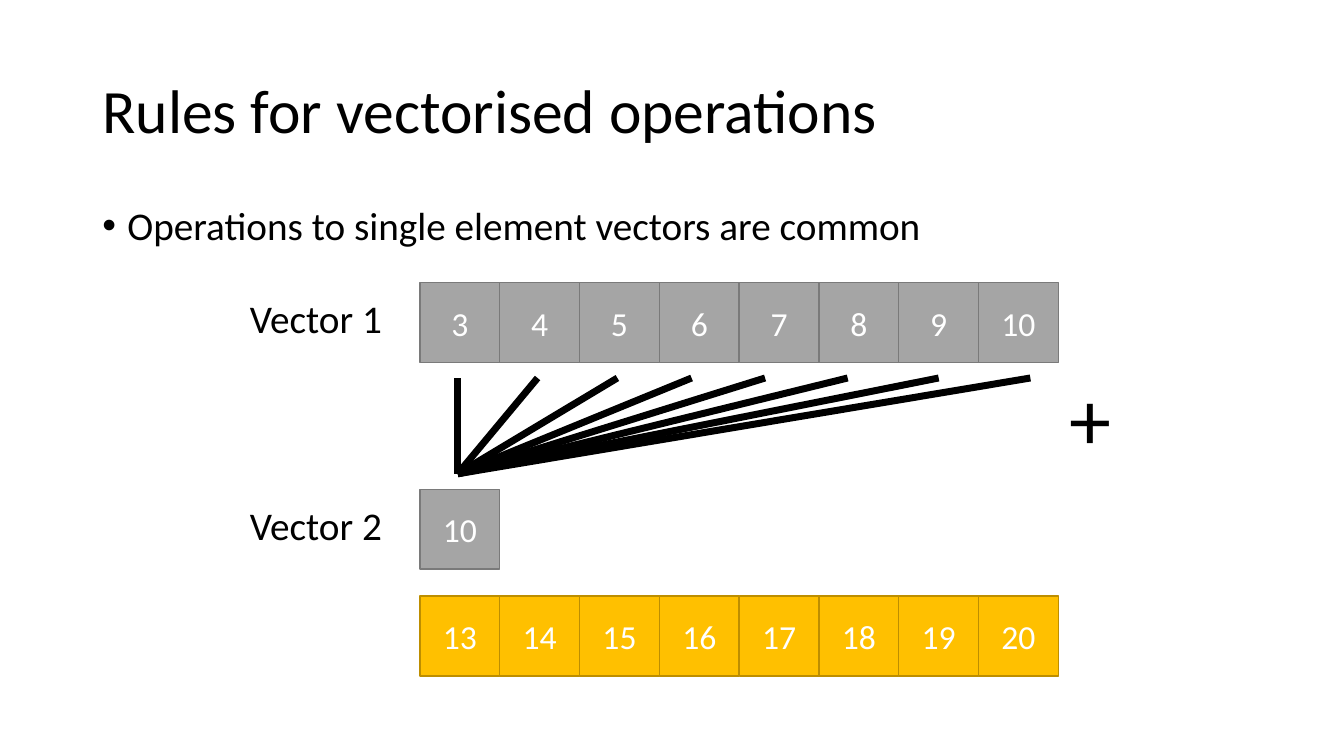
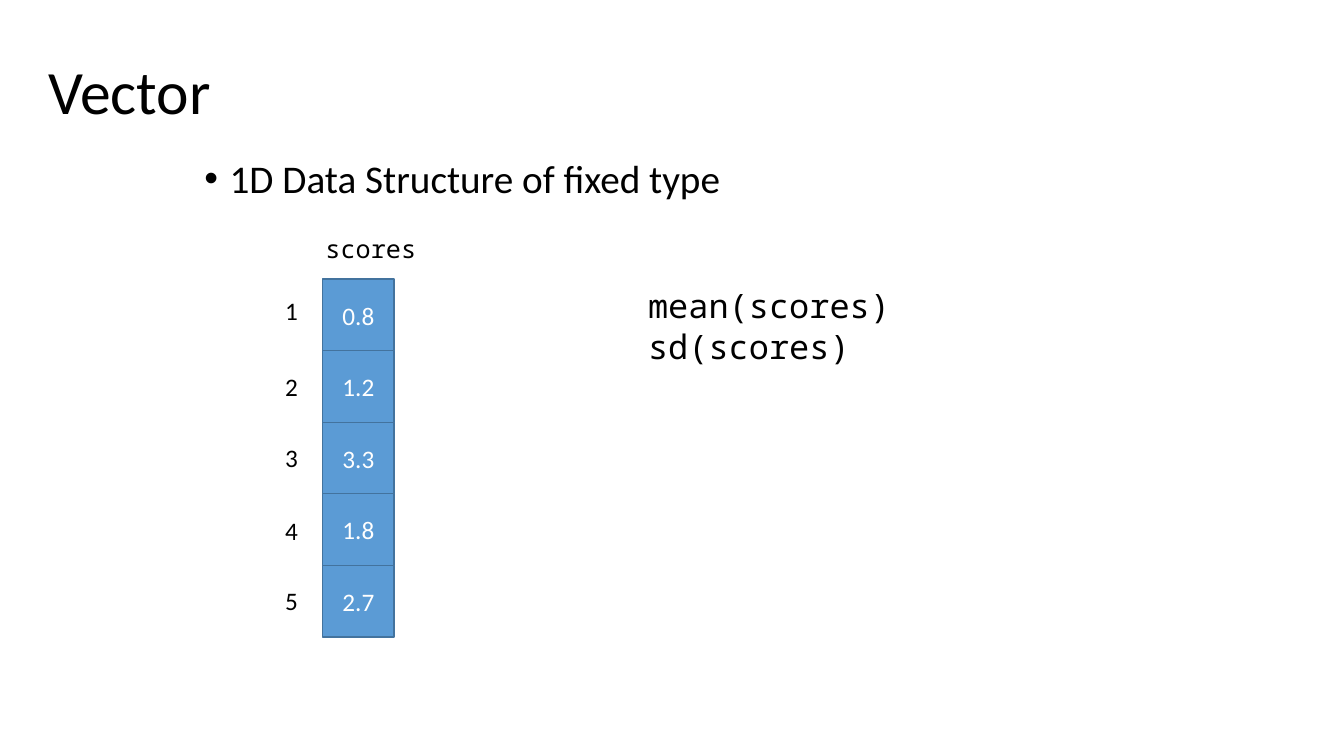
"""Builds two slides that explain vectors and vectorised operations."""
from dataclasses import dataclass

from lxml import etree
from pptx import Presentation
from pptx.dml.color import RGBColor
from pptx.enum.shapes import MSO_CONNECTOR, MSO_SHAPE
from pptx.enum.text import MSO_ANCHOR, MSO_AUTO_SIZE, PP_ALIGN
from pptx.oxml.ns import qn
from pptx.util import Pt

RECTANGLE = MSO_SHAPE.RECTANGLE
STRAIGHT = MSO_CONNECTOR.STRAIGHT
MIDDLE = MSO_ANCHOR.MIDDLE
TOP = MSO_ANCHOR.TOP
NO_FIT = MSO_AUTO_SIZE.NONE
LEFT = PP_ALIGN.LEFT
CENTER = PP_ALIGN.CENTER
TITLE_ONLY = 5


@dataclass(frozen=True)
class Theme:
    """Colours, fonts and type sizes of the deck."""
    ink: str = "000000"
    cell_ink: str = "FFFFFF"
    grey: tuple = ("A5A5A5", "7A7A7A")
    gold: tuple = ("FFC000", "BD8E00")
    blue: tuple = ("5B9BD5", "43739E")
    font: str = "Calibri"
    code_font: str = "Noto Sans Mono"
    title: int = 44
    body: int = 28
    code: int = 24
    cell: int = 24
    small: int = 18
    operator: int = 60
    line_spacing: float = 0.9
    bullet_indent: int = 18


THEME = Theme()


def write(paragraph, text, size, color=THEME.ink, font=THEME.font):
    """Add one formatted run to a paragraph."""
    run = paragraph.add_run()
    run.text = text
    run.font.size = Pt(size)
    run.font.name = font
    run.font.color.rgb = RGBColor.from_string(color)


def add_title_slide(deck, title, box):
    """Add a slide and place its title in the given box."""
    slide = deck.slides.add_slide(deck.slide_layouts[TITLE_ONLY])
    heading = slide.shapes.title
    heading.left, heading.top, heading.width, heading.height = map(Pt, box)
    frame = heading.text_frame
    frame.auto_size = NO_FIT
    frame.vertical_anchor = MIDDLE
    paragraph = frame.paragraphs[0]
    paragraph.alignment = LEFT
    paragraph.line_spacing = THEME.line_spacing
    write(paragraph, title, THEME.title)
    return slide


def add_bullet(shapes, text, box):
    """Add a text box with one bulleted paragraph."""
    frame = shapes.add_textbox(*map(Pt, box)).text_frame
    frame.word_wrap = True
    paragraph = frame.paragraphs[0]
    paragraph.line_spacing = THEME.line_spacing
    paragraph.space_before = Pt(10)
    properties = paragraph._p.get_or_add_pPr()
    properties.set("marL", str(Pt(THEME.bullet_indent)))
    properties.set("indent", str(-Pt(THEME.bullet_indent)))
    etree.SubElement(properties, qn("a:buFont")).set("typeface", "Arial")
    etree.SubElement(properties, qn("a:buChar")).set("char", "•")
    write(paragraph, text, THEME.body)


def add_label(shapes, lines, box, size, font=THEME.font):
    """Add unwrapped text, one paragraph for each line."""
    frame = shapes.add_textbox(*map(Pt, box)).text_frame
    frame.word_wrap = False
    frame.vertical_anchor = TOP
    for index, line in enumerate(lines):
        paragraph = frame.add_paragraph() if index else frame.paragraphs[0]
        write(paragraph, line, size, font=font)


def add_vector(shapes, values, left, top, side, colors, size, vertical=False):
    """Add a group of adjoining square cells, across or down."""
    fill, outline = colors
    cells = shapes.add_group_shape().shapes
    for index, value in enumerate(values):
        offset = index * side
        x, y = (left, top + offset) if vertical else (left + offset, top)
        cell = cells.add_shape(RECTANGLE, Pt(x), Pt(y), Pt(side), Pt(side))
        cell.shadow.inherit = False
        cell.fill.solid()
        cell.fill.fore_color.rgb = RGBColor.from_string(fill)
        cell.line.color.rgb = RGBColor.from_string(outline)
        cell.line.width = Pt(1)
        cell.text_frame.vertical_anchor = MIDDLE
        paragraph = cell.text_frame.paragraphs[0]
        paragraph.alignment = CENTER
        write(paragraph, str(value), size, THEME.cell_ink)


def add_fan(shapes, starts, top, end, bottom):
    """Add a group of thick lines that meet in one point."""
    rays = shapes.add_group_shape().shapes
    for start in starts:
        ray = rays.add_connector(STRAIGHT, Pt(start), Pt(top), Pt(end), Pt(bottom))
        ray.line.color.rgb = RGBColor.from_string(THEME.ink)
        ray.line.width = Pt(5)
        etree.SubElement(ray._element.spPr, qn("a:effectLst"))


def build_operations(deck):
    """Show a single element added to each element of a vector."""
    slide = add_title_slide(deck, "Rules for vectorised operations", (66, 28.8, 828, 104.4))
    shapes = slide.shapes
    add_bullet(shapes, "Operations to single element vectors are common", (66, 144, 828, 342.7))

    left, side, addend = 300, 57, 10
    numbers = range(3, 11)
    sums = [number + addend for number in numbers]
    rows = ((numbers, 202, THEME.grey), ([addend], 349.5, THEME.grey), (sums, 425.8, THEME.gold))
    for values, top, colors in rows:
        add_vector(shapes, values, left, top, side, colors, THEME.cell)

    for name, top in (("Vector 1", 206.6), ("Vector 2", 354.6)):
        add_label(shapes, [name], (171.4, top, 110, 41), THEME.body)
    add_label(shapes, ["+"], (756.7, 258.5, 44.6, 80), THEME.operator)

    ray_starts = (327, 384, 441, 494, 546.5, 605.5, 670.5, 736)
    add_fan(shapes, ray_starts, 270, ray_starts[0], 338.4)


def build_vector(deck):
    """Show a vector of scores with its indices and two function calls."""
    slide = add_title_slide(deck, "Vector", (27.4, 22.3, 648, 90))
    shapes = slide.shapes
    add_bullet(shapes, "1D Data Structure of fixed type", (139, 110.2, 648, 53.3))

    scores = (0.8, 1.2, 3.3, 1.8, 2.7)
    add_vector(shapes, scores, 230.4, 199.4, 51.1, THEME.blue, THEME.small, vertical=True)
    index_tops = (207.4, 261.4, 312.5, 364.3, 414.7)
    for index, top in enumerate(index_tops, start=1):
        add_label(shapes, [str(index)], (196.6, top, 23.8, 29), THEME.small)

    add_label(shapes, ["scores"], (225.4, 163.4, 80, 29), THEME.small, THEME.code_font)
    add_label(shapes, ["mean(scores)", "sd(scores)"], (455.8, 200.2, 190, 65.5),
              THEME.code, THEME.code_font)


def main():
    """Build and save the deck."""
    deck = Presentation()
    deck.slide_width, deck.slide_height = Pt(960), Pt(540)
    build_operations(deck)
    build_vector(deck)
    deck.save("out.pptx")


if __name__ == "__main__":
    main()
